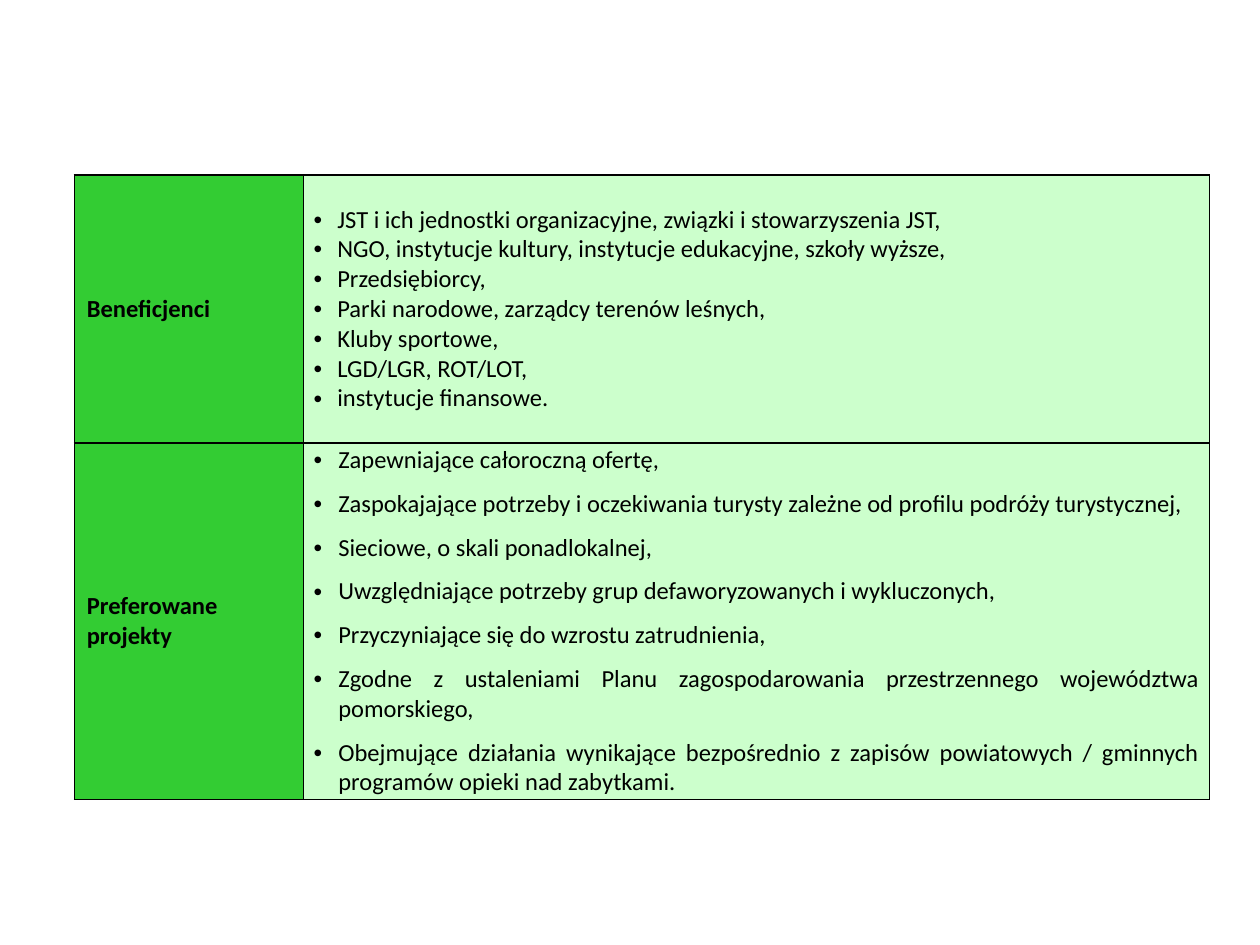
from dataclasses import dataclass

import pptx
import pptx.dml.color
import pptx.enum.text
import pptx.oxml.ns
import pptx.util
from lxml import etree
from pptx.util import Cm, Pt

LABEL_GREEN = pptx.dml.color.RGBColor(0x33, 0xCC, 0x33)
LIST_GREEN = pptx.dml.color.RGBColor(0xCC, 0xFF, 0xCC)
BLACK = pptx.dml.color.RGBColor(0, 0, 0)
FONT = "Calibri"
JUSTIFY = pptx.enum.text.PP_ALIGN.JUSTIFY


@dataclass
class Section:
    label: str
    items: list[str]
    height: int
    indent: int
    gap: int = Pt(0)
    align: pptx.enum.text.PP_ALIGN | None = None


SECTIONS = [
    Section(
        "Beneficjenci",
        [
            "JST i ich jednostki organizacyjne, związki i stowarzyszenia JST,",
            "NGO, instytucje kultury, instytucje edukacyjne, szkoły wyższe,",
            "Przedsiębiorcy,",
            "Parki narodowe, zarządcy terenów leśnych,",
            "Kluby sportowe,",
            "LGD/LGR, ROT/LOT,",
            "instytucje finansowe.",
        ],
        height=Cm(5.4),
        indent=Cm(0.48),
    ),
    Section(
        "Preferowane projekty",
        [
            "Zapewniające całoroczną ofertę,",
            "Zaspokajające potrzeby i oczekiwania turysty zależne od profilu podróży turystycznej,",
            "Sieciowe, o skali ponadlokalnej,",
            "Uwzględniające potrzeby grup defaworyzowanych i wykluczonych,",
            "Przyczyniające się do wzrostu zatrudnienia,",
            "Zgodne z ustaleniami Planu zagospodarowania przestrzennego województwa pomorskiego,",
            "Obejmujące działania wynikające bezpośrednio z zapisów powiatowych / gminnych "
            "programów opieki nad zabytkami.",
        ],
        height=Cm(7.19),
        indent=Cm(0.5),
        gap=Pt(8),
        align=JUSTIFY,
    ),
]


def add_element(parent, tag: str, **attributes: str):
    return etree.SubElement(parent, pptx.oxml.ns.qn(tag), attributes)


def set_borders(cell) -> None:
    properties = cell._tc.get_or_add_tcPr()
    for position, side in enumerate(("a:lnL", "a:lnR", "a:lnT", "a:lnB")):
        line = add_element(properties, side, w=str(Pt(1)))
        add_element(add_element(line, "a:solidFill"), "a:srgbClr", val=str(BLACK))
        properties.insert(position, line)  # borders come before the fill


def style_cell(cell, fill: pptx.dml.color.RGBColor, side: int, end: int) -> None:
    cell.fill.solid()
    cell.fill.fore_color.rgb = fill
    cell.vertical_anchor = pptx.enum.text.MSO_ANCHOR.MIDDLE
    cell.margin_left = cell.margin_right = side
    cell.margin_top = cell.margin_bottom = end
    set_borders(cell)


def style_font(paragraph, bold: bool) -> None:
    font = paragraph.font
    font.name, font.size, font.bold = FONT, Pt(14), bold
    font.color.rgb = BLACK


def fill_label(cell, section: Section) -> None:
    style_cell(cell, LABEL_GREEN, Cm(0.25), Cm(0.13))
    cell.text = section.label
    style_font(cell.text_frame.paragraphs[0], bold=True)


def fill_list(cell, section: Section) -> None:
    style_cell(cell, LIST_GREEN, Cm(0.2), Cm(0))
    cell.text = "\n".join(section.items)
    for number, paragraph in enumerate(cell.text_frame.paragraphs):
        properties = paragraph._p.get_or_add_pPr()
        properties.set("marL", str(section.indent))
        properties.set("indent", str(-section.indent))
        add_element(properties, "a:buFont", typeface="Arial")
        add_element(properties, "a:buChar", char="•")
        paragraph.alignment = section.align
        if number and section.gap:
            paragraph.space_before = section.gap
        style_font(paragraph, bold=False)


def main() -> None:
    deck = pptx.Presentation()
    deck.slide_width, deck.slide_height = Cm(25.4), Cm(19.05)
    page = deck.slides.add_slide(deck.slide_layouts[6])

    # Table frame
    widths = (Cm(4.62), Cm(18.26))
    height = sum(section.height for section in SECTIONS)
    table = page.shapes.add_table(
        len(SECTIONS), len(widths), Cm(1.5), Cm(3.53), sum(widths), height
    ).table
    table.first_row = table.horz_banding = False
    for column, width in zip(table.columns, widths):
        column.width = width

    # One row for each section: label and bulleted list
    for number, section in enumerate(SECTIONS):
        table.rows[number].height = section.height
        fill_label(table.cell(number, 0), section)
        fill_list(table.cell(number, 1), section)

    deck.save("out.pptx")


if __name__ == "__main__":
    main()
